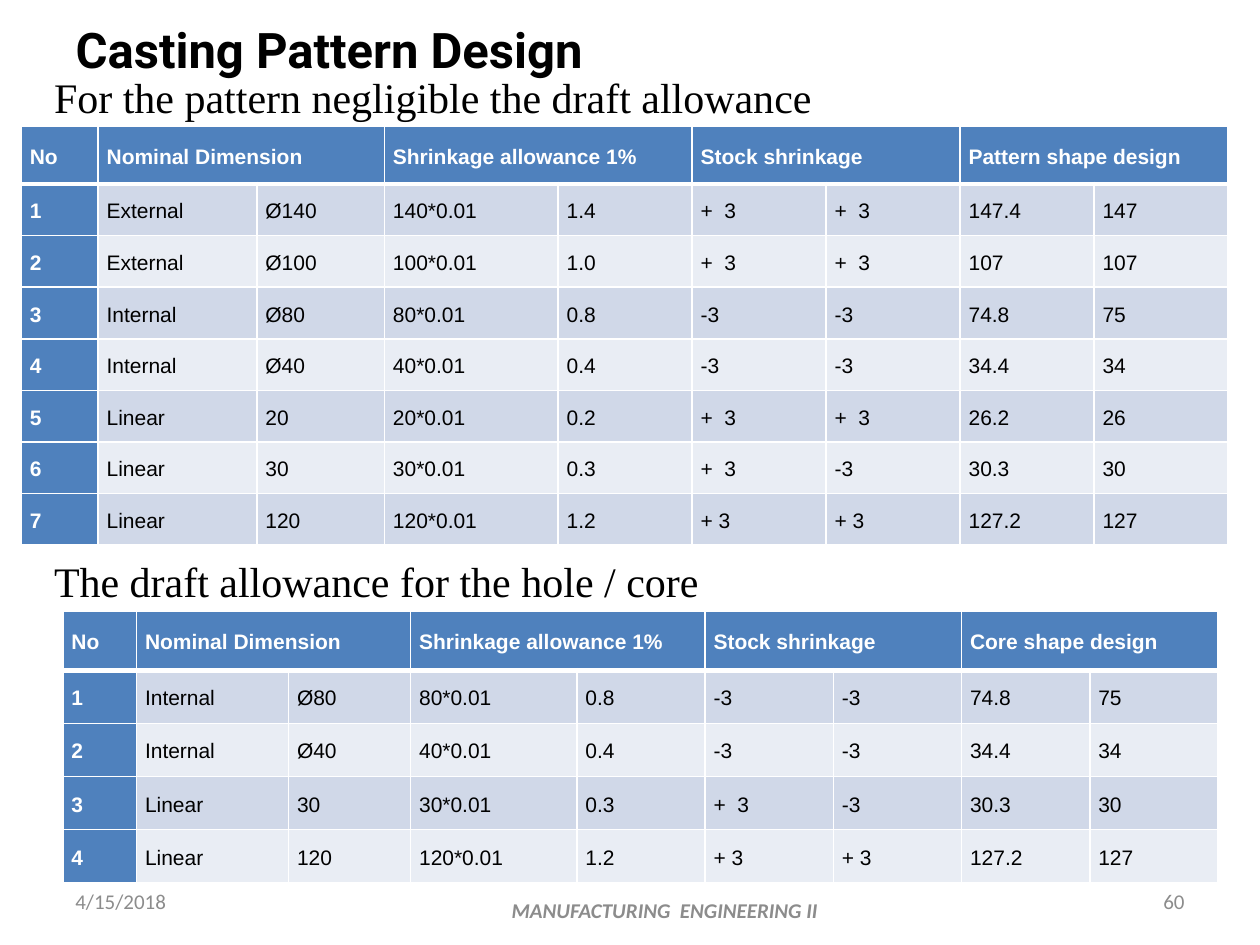
import pptx
import pptx.dml.color
import pptx.enum.text
import pptx.oxml
import pptx.oxml.ns
import pptx.util

Cm = pptx.util.Cm
Pt = pptx.util.Pt
ALIGN = pptx.enum.text.PP_ALIGN
ANCHOR = pptx.enum.text.MSO_ANCHOR

COLORS = {"black": "000000", "white": "FFFFFF", "grey": "8C8C8C",
          "header": "4F81BD", "odd": "D0D8E8", "even": "E9EDF4"}

TITLE = "Casting Pattern Design"
HEADINGS = [  # text, top in cm
    ("For the pattern negligible the draft allowance", 1.47),
    ("The draft allowance for the hole / core", 11.23),
]
FOOTERS = [  # text, (left, top, width, height) in cm, alignment, emphasised
    ("4/15/2018", (1.27, 17.65, 5.92, 1.02), ALIGN.LEFT, False),
    ("60", (18.21, 17.65, 5.92, 1.02), ALIGN.RIGHT, False),
    ("MANUFACTURING  ENGINEERING II", (8.69, 17.83, 8.05, 1.02), ALIGN.RIGHT, True),
]
PATTERN_ROWS = [
    ("External", "Ø140", "140*0.01", "1.4", "+  3", "+  3", "147.4", "147"),
    ("External", "Ø100", "100*0.01", "1.0", "+  3", "+  3", "107", "107"),
    ("Internal", "Ø80", "80*0.01", "0.8", "-3", "-3", "74.8", "75"),
    ("Internal", "Ø40", "40*0.01", "0.4", "-3", "-3", "34.4", "34"),
    ("Linear", "20", "20*0.01", "0.2", "+  3", "+  3", "26.2", "26"),
    ("Linear", "30", "30*0.01", "0.3", "+  3", "-3", "30.3", "30"),
    ("Linear", "120", "120*0.01", "1.2", "+ 3", "+ 3", "127.2", "127"),
]
CORE_ROWS = [PATTERN_ROWS[i] for i in (2, 3, 5, 6)]
HEADER_GROUPS = ["Nominal Dimension", "Shrinkage allowance 1%", "Stock shrinkage"]
COLUMN_SHARES = [1.55, 3.2, 2.57, 3.5] + [2.7] * 5
TABLES = [  # last header, rows, left, top, width, header height, row height in cm
    ("Pattern shape design", PATTERN_ROWS, 0.43, 2.54, 24.33, 1.17, 1.04),
    ("Core shape design", CORE_ROWS, 1.27, 12.32, 23.29, 1.19, 1.07),
]


def rgb(color):
    return pptx.dml.color.RGBColor.from_string(COLORS[color])


def add_run(paragraph, text, font, size, color, bold=False, italic=False):
    run = paragraph.add_run()
    run.text = text
    run.font.name = font
    run.font.size = Pt(size)
    run.font.color.rgb = rgb(color)
    run.font.bold = bold
    run.font.italic = italic


def add_text_box(slide, box, anchor):
    frame = slide.shapes.add_textbox(*map(Cm, box)).text_frame
    frame.word_wrap = True
    frame.vertical_anchor = anchor
    return frame.paragraphs[0]


def set_borders(cell, top, bottom):
    """Draw white cell borders; top and bottom are widths in points."""
    properties = cell._tc.get_or_add_tcPr()
    for side, width in (("L", 1), ("R", 1), ("T", top), ("B", bottom)):
        properties.append(pptx.oxml.parse_xml(
            f'<a:ln{side} {pptx.oxml.ns.nsdecls("a")} w="{Pt(width)}"><a:solidFill>'
            f'<a:srgbClr val="{COLORS["white"]}"/></a:solidFill></a:ln{side}>'))


def fill_cell(cell, text, row, column):
    strong = row == 0 or column == 0
    cell.margin_left = cell.margin_right = Cm(0.17)
    cell.margin_top = cell.margin_bottom = 0
    cell.vertical_anchor = ANCHOR.MIDDLE
    set_borders(cell, top=3 if row == 1 else 1, bottom=3 if row == 0 else 1)
    cell.fill.solid()
    cell.fill.fore_color.rgb = rgb("header" if strong else "odd" if row % 2 else "even")
    if text:
        paragraph = cell.text_frame.paragraphs[0]
        paragraph.alignment = ALIGN.JUSTIFY
        paragraph.line_spacing = 1.15
        add_run(paragraph, text, "Arial", 12, "white" if strong else "black", bold=strong)


def add_allowance_table(slide, last_header, rows, left, top, width, header_height, row_height):
    header = ["No"]
    for group in HEADER_GROUPS + [last_header]:
        header += [group, ""]
    lines = [header] + [(str(number), *row) for number, row in enumerate(rows, 1)]
    height = header_height + row_height * len(rows)
    table = slide.shapes.add_table(len(lines), len(header), Cm(left), Cm(top),
                                   Cm(width), Cm(height)).table
    for column, share in zip(table.columns, COLUMN_SHARES):
        column.width = Cm(width * share / sum(COLUMN_SHARES))
    for r, line in enumerate(lines):
        table.rows[r].height = Cm(row_height if r else header_height)
        for c, text in enumerate(line):
            fill_cell(table.cell(r, c), text, r, c)
    for c in range(1, len(header), 2):
        table.cell(0, c).merge(table.cell(0, c + 1))


def main():
    deck = pptx.Presentation()
    deck.slide_width, deck.slide_height = Cm(25.4), Cm(19.05)
    slide = deck.slides.add_slide(deck.slide_layouts[5])

    title = slide.shapes.title
    title.left, title.top, title.width, title.height = map(Cm, (1.27, 0.2, 22.86, 1.57))
    title.text_frame.vertical_anchor = ANCHOR.MIDDLE
    title_line = title.text_frame.paragraphs[0]
    title_line.alignment = ALIGN.LEFT
    add_run(title_line, TITLE, "Roboto", 28, "black", bold=True)

    for text, box, alignment, emphasised in FOOTERS:
        footer = add_text_box(slide, box, ANCHOR.MIDDLE)
        footer.alignment = alignment
        add_run(footer, text, "Calibri", 12, "grey", emphasised, emphasised)

    for text, top in HEADINGS:
        heading = add_text_box(slide, (0.84, top, 23.93, 1.14), ANCHOR.TOP)
        heading.line_spacing = 0.85
        add_run(heading, text, "Times New Roman", 24, "black")

    for table in TABLES:
        add_allowance_table(slide, *table)

    deck.save("out.pptx")


if __name__ == "__main__":
    main()
